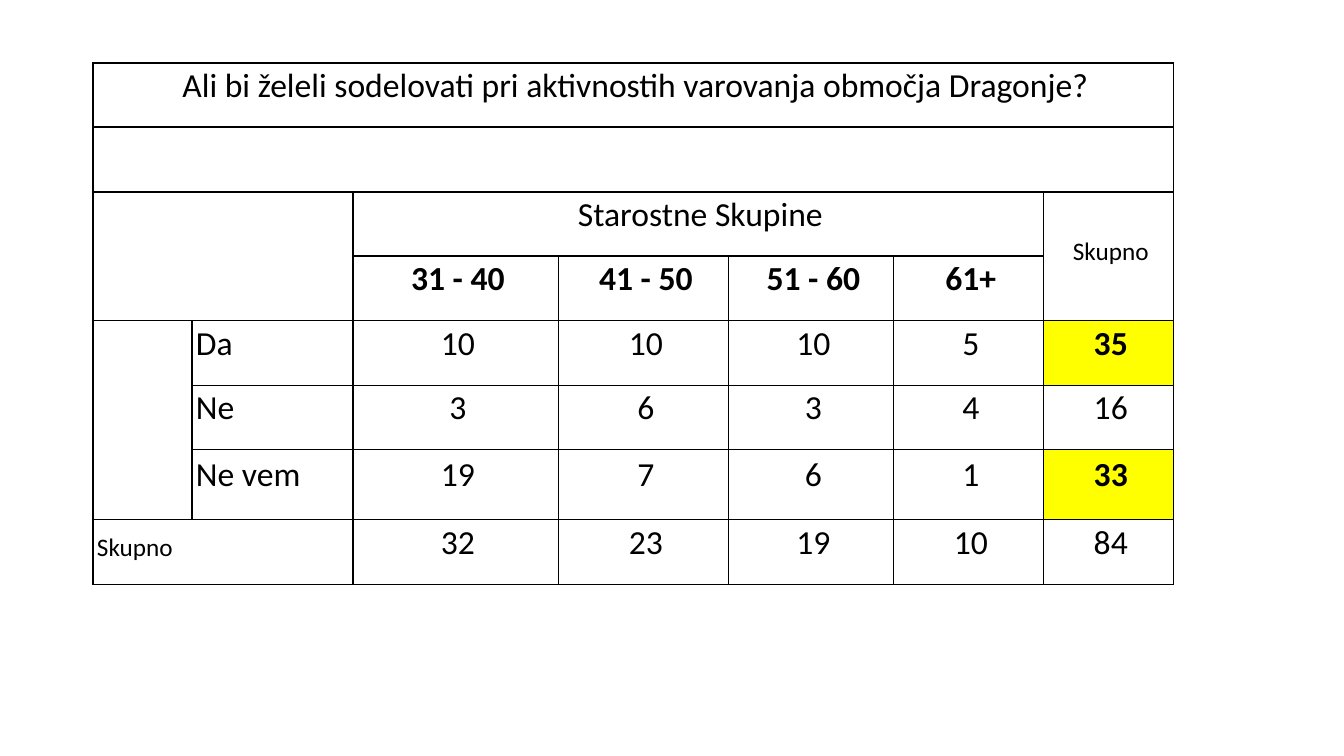
from lxml.etree import SubElement
from pptx import Presentation
from pptx.dml.color import RGBColor
from pptx.enum.text import MSO_ANCHOR, PP_ALIGN
from pptx.oxml.ns import qn
from pptx.util import Pt

SCALE = 12192000 / 1344
BLACK, WHITE, YELLOW = "000000", "FFFFFF", "FFFF00"

COLUMNS = [99, 161, 206, 170, 165, 150, 130]
ROWS = [64, 65, 64, 65, 65, 64, 70, 65]
CONTENT = [
    ["Ali bi želeli sodelovati pri aktivnostih varovanja območja Dragonje?"],
    [],
    ["", "", "Starostne Skupine", "", "", "", "Skupno"],
    ["", "", "31 - 40", "41 - 50", "51 - 60", "61+"],
    ["", "Da", "10", "10", "10", "5", "35"],
    ["", "Ne", "3", "6", "3", "4", "16"],
    ["", "Ne vem", "19", "7", "6", "1", "33"],
    ["Skupno", "", "32", "23", "19", "10", "84"],
]
MERGES = [
    (0, 0, 0, 6), (1, 0, 1, 6), (2, 0, 3, 1), (2, 2, 2, 5),
    (2, 6, 3, 6), (4, 0, 6, 0), (7, 0, 7, 1),
]
HIGHLIGHTS = {(4, 6), (6, 6)}
AGE_ROW = 3


def px(length):
    return round(length * SCALE)


def color(value):
    return RGBColor.from_string(value)


class SurveySlide:
    font = "Calibri"
    indent = 4
    line_spacing = Pt(16)

    def __init__(self, deck):
        self.slide = deck.slides.add_slide(deck.slide_layouts[6])

    def table(self, left, top, columns, rows):
        frame = self.slide.shapes.add_table(
            len(rows), len(columns), px(left), px(top), px(sum(columns)), px(sum(rows)))
        table = frame.table
        table.first_row = table.horz_banding = False
        for column, width in zip(table.columns, columns):
            column.width = px(width)
        for row, height in zip(table.rows, rows):
            row.height = px(height)
        return table

    def cell(self, cell, fill):
        properties = cell._tc.get_or_add_tcPr()
        for side in ("lnL", "lnR", "lnT", "lnB"):
            line = SubElement(properties, qn(f"a:{side}"), w=str(Pt(1)))
            SubElement(SubElement(line, qn("a:solidFill")), qn("a:srgbClr"), val=BLACK)
        cell.fill.solid()
        cell.fill.fore_color.rgb = color(fill)
        cell.vertical_anchor = MSO_ANCHOR.MIDDLE
        cell.margin_left = cell.margin_right = cell.margin_top = cell.margin_bottom = 0

    def text(self, cell, text, size, bold, align):
        cell.text_frame.text = text
        para = cell.text_frame.paragraphs[0]
        para.alignment = align
        para.line_spacing = self.line_spacing
        properties = para._p.get_or_add_pPr()
        properties.set("marL", str(px(self.indent)))
        properties.set("indent", "0")
        font = para.runs[0].font
        font.name = self.font
        font.size = Pt(size)
        font.bold = bold
        font.color.rgb = color(BLACK)


def main():
    deck = Presentation()
    deck.slide_width, deck.slide_height = px(1344), px(756)
    survey = SurveySlide(deck)
    table = survey.table(93, 63, COLUMNS, ROWS)
    for top, left, bottom, right in MERGES:
        table.cell(top, left).merge(table.cell(bottom, right))
    for row in range(len(ROWS)):
        for column in range(len(COLUMNS)):
            highlighted = (row, column) in HIGHLIGHTS
            survey.cell(table.cell(row, column), YELLOW if highlighted else WHITE)
        for column, text in enumerate(CONTENT[row]):
            if text:
                size = 18 if text == "Skupno" else 24
                bold = row == AGE_ROW or (row, column) in HIGHLIGHTS
                is_label = row > AGE_ROW and column < 2
                align = PP_ALIGN.LEFT if is_label else PP_ALIGN.CENTER
                survey.text(table.cell(row, column), text, size, bold, align)
    deck.save("out.pptx")


if __name__ == "__main__":
    main()
